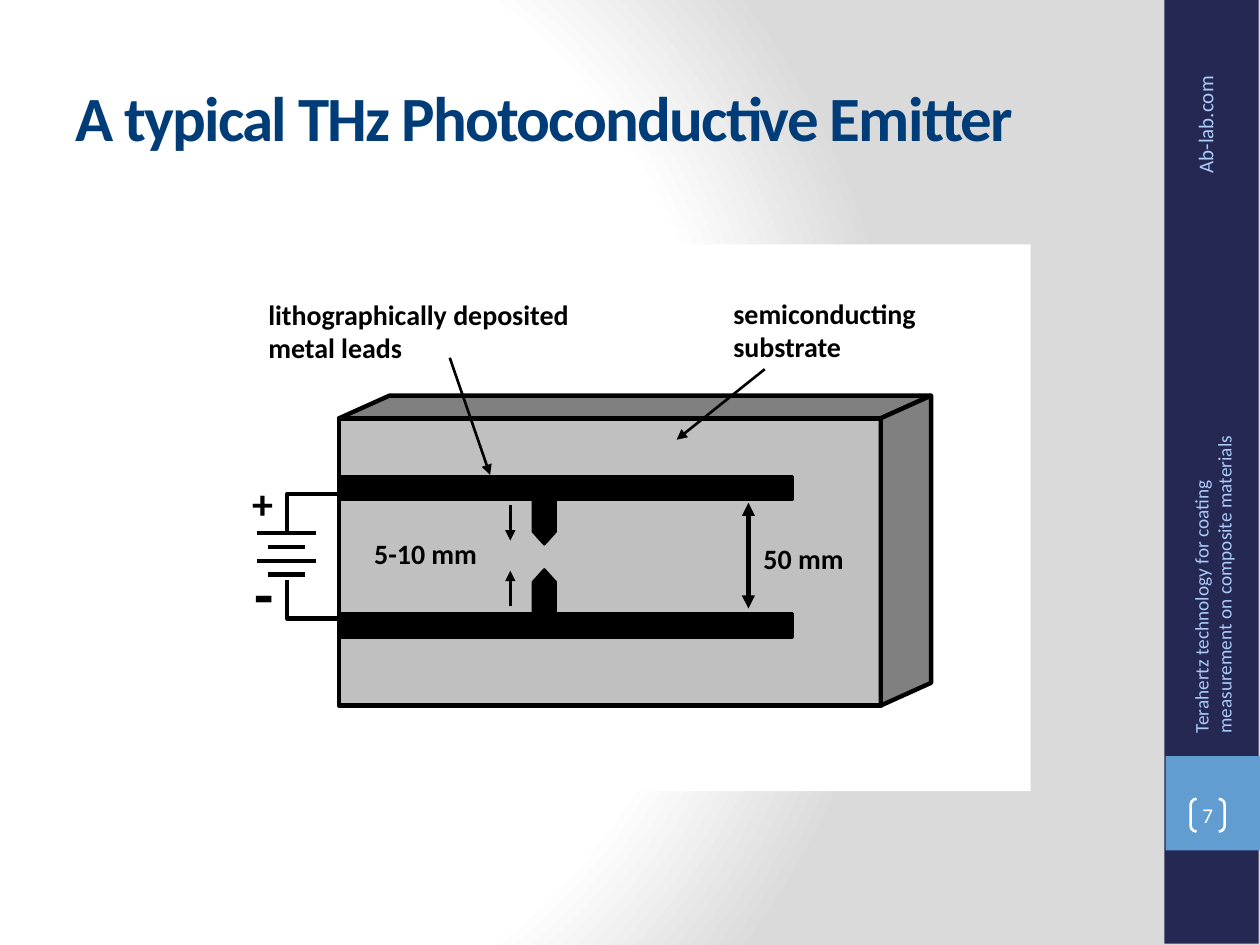
import pptx
import pptx.util
import pptx.dml.color
import pptx.enum.shapes
import pptx.enum.text
import pptx.oxml
from pptx.oxml.ns import qn

Inches, Pt = pptx.util.Inches, pptx.util.Pt
SHAPE = pptx.enum.shapes.MSO_SHAPE
ALIGN = pptx.enum.text.PP_ALIGN
ANCHOR = pptx.enum.text.MSO_ANCHOR
DRAWING_NS = "http://schemas.openxmlformats.org/drawingml/2006/main"
PRESENTATION_NS = "http://schemas.openxmlformats.org/presentationml/2006/main"

BLACK, WHITE = "000000", "FFFFFF"
NAVY, BLUE, PALE_BLUE, TITLE_BLUE = "242852", "629DD1", "ACCBF9", "003D78"
FACE, SIDE = "C0C0C0", "808080"


def rgb(value):
    return pptx.dml.color.RGBColor.from_string(value)


class Slide:
    """Holds the font and the slide that elements are added to."""

    font = "Calibri"

    def __init__(self, prs):
        self.s = prs.slides.add_slide(prs.slide_layouts[6])

    def background(self, stops, focus):
        """Fill the background with a circular gradient towards focus (l, t, r, b in %)."""
        gs = "".join(f'<a:gs pos="{pos * 1000}"><a:srgbClr val="{color}"/></a:gs>'
                     for pos, color in stops)
        rect = " ".join(f'{side}="{v * 1000}"' for side, v in zip("ltrb", focus))
        bg = pptx.oxml.parse_xml(
            f'<p:bg xmlns:p="{PRESENTATION_NS}" xmlns:a="{DRAWING_NS}"><p:bgPr>'
            f'<a:gradFill rotWithShape="1"><a:gsLst>{gs}</a:gsLst>'
            f'<a:path path="circle"><a:fillToRect {rect}/></a:path></a:gradFill>'
            '<a:effectLst/></p:bgPr></p:bg>')
        self.s.element.cSld.insert(0, bg)

    def paint(self, sp, fill, line, width):
        sp.shadow.inherit = False
        if fill:
            sp.fill.solid()
            sp.fill.fore_color.rgb = rgb(fill)
        else:
            sp.fill.background()
        if line:
            sp.line.color.rgb = rgb(line)
            sp.line.width = Pt(width)
        else:
            sp.line.fill.background()
        return sp

    def shape(self, kind, x, y, w, h, fill=None, line=None, width=1.5):
        sp = self.s.shapes.add_shape(kind, Inches(x), Inches(y), Inches(w), Inches(h))
        return self.paint(sp, fill, line, width)

    def outline(self, points, fill=None, width=2.5, close=True):
        pts = [(Inches(x), Inches(y)) for x, y in points]
        builder = self.s.shapes.build_freeform(*pts[0])
        builder.add_line_segments(pts[1:], close=close)
        return self.paint(builder.convert_to_shape(), fill, BLACK, width)

    def line(self, x1, y1, x2, y2, width=1.5, heads=()):
        """Draw a straight line; heads names its arrow ends (headEnd, tailEnd)."""
        c = self.s.shapes.add_connector(pptx.enum.shapes.MSO_CONNECTOR.STRAIGHT,
                                        Inches(x1), Inches(y1), Inches(x2), Inches(y2))
        c.line.color.rgb = rgb(BLACK)
        c.line.width = Pt(width)
        ln = c.line._get_or_add_ln()
        for end in heads:
            ln.append(ln.makeelement(qn("a:" + end), {"type": "triangle"}))
        c._element.spPr.append(ln.makeelement(qn("a:effectLst"), {}))

    def set_text(self, sp, lines, size, color, bold=False, inset=True, align=ALIGN.LEFT,
                 anchor=ANCHOR.TOP):
        tf = sp.text_frame
        tf.word_wrap = True
        tf.vertical_anchor = anchor
        if not inset:
            tf.margin_left = tf.margin_right = tf.margin_top = tf.margin_bottom = 0
        tf.text = "\n".join(lines)
        for p in tf.paragraphs:
            p.alignment = align
            p.font.name = self.font
            p.font.size = Pt(size)
            p.font.bold = bold
            p.font.color.rgb = rgb(color)
        return sp

    def text(self, x, y, w, h, lines, size, color, rotation=0, **style):
        sp = self.s.shapes.add_textbox(Inches(x), Inches(y), Inches(w), Inches(h))
        sp.rotation = rotation
        return self.set_text(sp, lines, size, color, **style)

    def label(self, x, y, w, h, *lines, size=16):
        self.text(x, y, w, h, lines, size, BLACK, bold=True, inset=False)


def draw_sidebar(slide):
    slide.shape(SHAPE.RECTANGLE, 9.24, -0.01, 0.75, 7.5, NAVY)
    slide.shape(SHAPE.RECTANGLE, 9.25, 6, 0.75, 0.75, BLUE)
    slide.text(8.74, 0.5, 1.65, 0.3, ["Ab-lab.com"], 12, PALE_BLUE, rotation=270)
    slide.text(8.11, 4.24, 2.96, 0.4,
               ["Terahertz technology for coating measurement on composite materials"],
               11, PALE_BLUE, rotation=270)
    number = slide.shape(SHAPE.DOUBLE_BRACKET, 9.45, 6.34, 0.27, 0.26, line=WHITE)
    number.adjustments[0] = 0.18
    slide.set_text(number, ["7"], 12, WHITE, inset=False, align=ALIGN.CENTER,
                   anchor=ANCHOR.MIDDLE)


def draw_emitter(slide):
    left, right, top, bottom = 2.69, 6.99, 3.32, 5.6
    dx, dy = 0.4, -0.18
    slide.shape(SHAPE.RECTANGLE, 1.39, 1.94, 6.79, 4.34, WHITE)
    slide.outline([(left, bottom), (right, bottom), (right, top), (left, top)], FACE)
    slide.outline([(left, top), (left + dx, top + dy), (right + dx, top + dy),
                   (right, top)], SIDE)
    slide.outline([(right, bottom), (right + dx, bottom + dy), (right + dx, top + dy),
                   (right, top)], SIDE)

    for y in (3.78, 4.87):
        slide.shape(SHAPE.RECTANGLE, left, y, 3.6, 0.19, BLACK, BLACK)
    # Each electrode, battery wire and gap arrow comes as an upper and a lower one.
    for base, down in ((3.96, 1), (4.88, -1)):
        shoulder, tip = base + 0.26 * down, base + 0.36 * down
        slide.outline([(4.23, base), (4.23, shoulder), (4.32, tip), (4.41, shoulder),
                       (4.41, base)], BLACK, width=1.5)
    for y, down in ((3.92, 1), (4.91, -1)):
        slide.outline([(2.74, y), (2.28, y), (2.28, y + 0.31 * down)], close=False)
    for y, down in ((4.01, 1), (4.81, -1)):
        slide.line(4.05, y, 4.05, y + 0.28 * down, heads=["tailEnd"])

    for i in range(4):
        x1, x2 = ((2.04, 2.51), (2.13, 2.42))[i % 2]
        y = 4.23 + 0.11 * i
        slide.line(x1, y, x2, y, width=2.5)
    slide.label(2, 3.79, 0.18, 0.39, "+", size=24)
    slide.label(2.02, 4.4, 0.27, 0.65, "-", size=36)

    slide.line(5.94, 3.99, 5.94, 4.83, width=2.5, heads=["headEnd", "tailEnd"])
    slide.label(6.06, 4.3, 1.03, 0.58, "50 mm")
    slide.label(2.97, 4.26, 0.91, 0.26, "5-10 mm")
    slide.line(6.07, 2.93, 5.37, 3.49, heads=["tailEnd"])
    slide.label(5.82, 2.35, 2.42, 0.62, "semiconducting", "substrate")
    slide.line(3.57, 2.84, 3.89, 3.77, heads=["tailEnd"])
    slide.label(2.13, 2.36, 2.87, 0.52, "lithographically deposited", "metal leads")


def main():
    prs = pptx.Presentation()
    prs.slide_width, prs.slide_height = Inches(10), Inches(7.5)
    slide = Slide(prs)
    slide.background([(0, WHITE), (75, WHITE), (100, "DADADA")], (20, 50, 100, 50))
    draw_sidebar(slide)
    draw_emitter(slide)
    title = slide.text(0.5, 0.3, 8.33, 1.25, ["A typical THz Photoconductive Emitter"],
                       36, TITLE_BLUE, bold=True, anchor=ANCHOR.MIDDLE)
    r = title.text_frame.paragraphs[0].runs[0]
    r._r.get_or_add_rPr().set("spc", "-100")
    prs.save("out.pptx")


if __name__ == "__main__":
    main()
